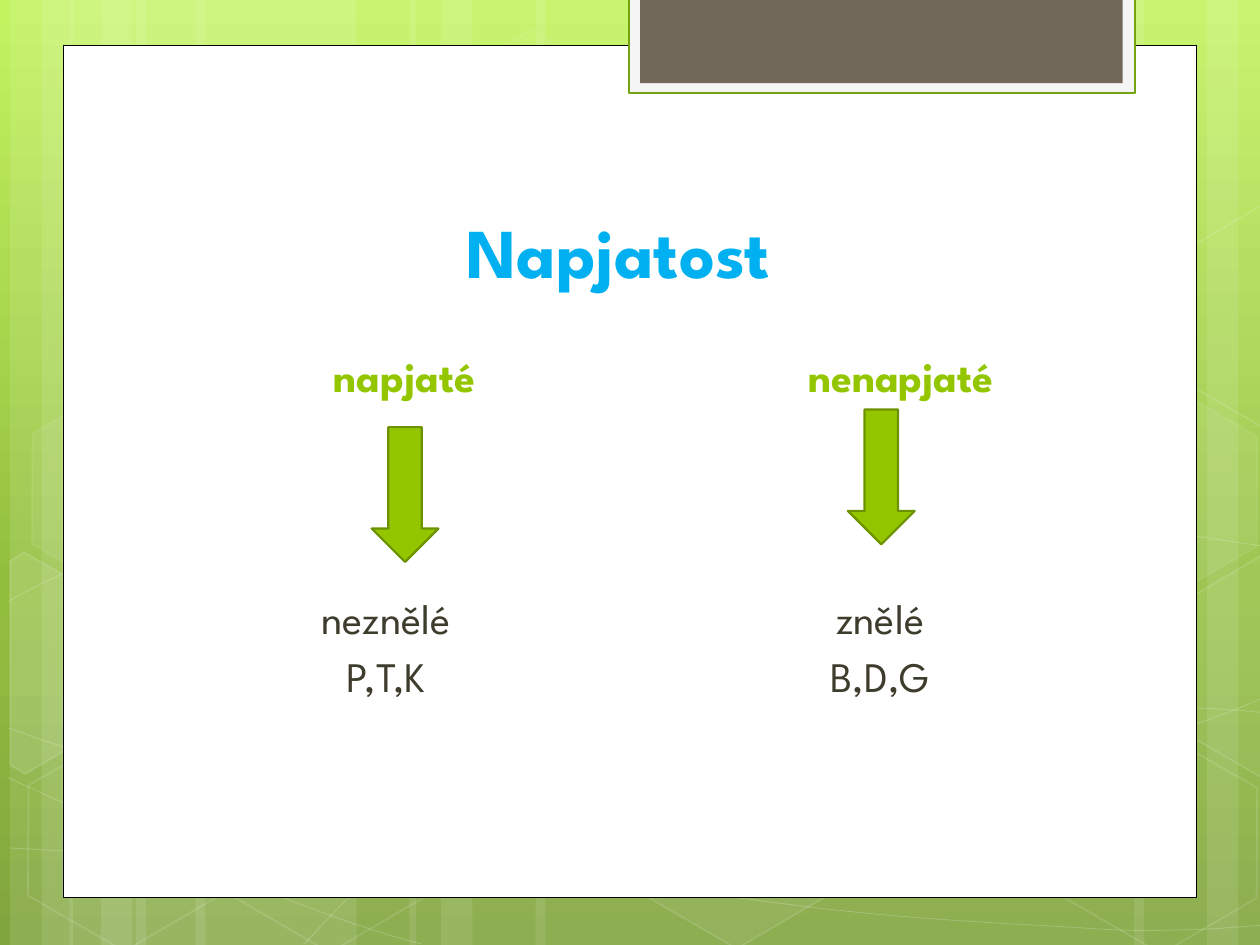
"""Build the Napjatost slide: tense and lax consonants over a green hexagon backdrop."""
import copy
import math

import pptx
import pptx.util
import pptx.dml.color
import pptx.enum.shapes
import pptx.enum.text
import pptx.oxml
import pptx.oxml.ns

RGBColor = pptx.dml.color.RGBColor
WHITE = RGBColor(0xFF, 0xFF, 0xFF)
BLACK = RGBColor(0x00, 0x00, 0x00)
LIME = RGBColor(0xC3, 0xF3, 0x5F)
LEAF = RGBColor(0x93, 0xBF, 0x3F)
MOSS = RGBColor(0x81, 0xA5, 0x3E)
GREEN = RGBColor(0x94, 0xC6, 0x00)
DARK_GREEN = RGBColor(0x6D, 0x92, 0x00)
TAB_EDGE = RGBColor(0x74, 0xA5, 0x10)
TAB_PALE = RGBColor(0xF5, 0xF5, 0xF5)
TAB_BROWN = RGBColor(0x71, 0x68, 0x5A)
SKY = RGBColor(0x00, 0xB0, 0xF0)
INK = RGBColor(0x3E, 0x3D, 0x2D)
FONT = "League Spartan"
TILT = 30
PRESET = pptx.enum.shapes.MSO_SHAPE
ANCHOR = pptx.enum.text.MSO_ANCHOR

presentation = pptx.Presentation()
presentation.slide_width = pptx.util.Inches(10)
presentation.slide_height = pptx.util.Inches(7.5)
slide = presentation.slides.add_slide(presentation.slide_layouts[6])
column = presentation.slide_width / 10
row = presentation.slide_height / 7.5


def paint(shape, fill=None, line=None, width=1, fill_alpha=100, line_alpha=100):
    """Set fill and line, each with its opacity in percent, and drop the shadow."""
    shape.shadow.inherit = False
    for target, color, alpha in ((shape.fill, fill, fill_alpha), (shape.line.fill, line, line_alpha)):
        if color is None:
            target.background()
            continue
        target.solid()
        target.fore_color.rgb = color
        if alpha < 100:
            holder = shape.element.spPr if target is shape.fill else shape.line._get_or_add_ln()
            solid = holder.find(pptx.oxml.ns.qn("a:solidFill"))
            opacity = pptx.oxml.parse_xml(
                f'<a:alpha {pptx.oxml.ns.nsdecls("a")} val="{alpha * 1000}"/>')
            solid[0].append(opacity)
    if line is not None:
        shape.line.width = pptx.util.Pt(width)


def place(kind, left, top, wide, high):
    """Add a preset shape, or a text box when kind is None, in grid units."""
    box = [int(left * column), int(top * row), int(wide * column), int(high * row)]
    if kind is None:
        return slide.shapes.add_textbox(*box)
    return slide.shapes.add_shape(kind, *box)


background = slide.background.fill
background.gradient()
background.gradient_angle = 270
stop_list = slide.element.find(".//" + pptx.oxml.ns.qn("a:gsLst"))
stop_list.insert(1, copy.deepcopy(stop_list[0]))
for stop, color, position in zip(background.gradient_stops, (LIME, LEAF, MOSS), (0, 0.62, 1)):
    stop.color.rgb = color
    stop.position = position

stripes = [(1.08, 1.75), (0.08, 0.5), (0.33, 0.83), (1.55, 1.75), (0.55, 0.5), (0.8, 0.83),
           (7.33, 1.75), (9.58, 0.5), (9, 0.83), (4.25, 3.08), (3.25, 0.5), (3.5, 0.83)]
for left, wide in stripes:
    paint(place(PRESET.RECTANGLE, left, 0, wide, 7.5), WHITE, fill_alpha=10)

curves = [
    [(0.07, 6.73), (0.61, 6.76), (1.15, 6.79), (1.9, 6.78), (2.65, 6.77), (3.58, 6.75), (4.58, 6.65),
     (5.58, 6.55), (7, 6.36), (7.92, 6.17), (8.83, 5.98), (9.77, 5.68), (10.07, 5.51)],
    [(0.07, 4.77), (0.36, 4.61), (0.65, 4.46), (1.21, 4.31), (1.78, 4.16), (2.59, 3.94), (3.47, 3.87),
     (4.36, 3.8), (5.44, 3.79), (6.54, 3.87), (7.64, 3.95), (9.47, 4.26), (10.07, 4.34)],
    [(0.06, 6.17), (1.27, 6.72), (2.47, 7.27), (3.34, 7.49)],
    [(0.07, 5.78), (0.38, 5.89), (0.7, 6), (1.28, 6.16), (1.86, 6.31), (2.73, 6.56), (3.57, 6.73),
     (4.4, 6.9), (5.45, 7.08), (6.28, 7.18), (7.11, 7.29), (8, 7.33), (8.53, 7.36),
     (9.05, 7.4), (9.19, 7.38), (9.45, 7.38), (9.71, 7.37), (9.89, 7.35), (10.07, 7.34)],
    [(2.42, 7.49), (2.6, 7.29), (2.78, 7.09), (3.02, 6.91), (3.26, 6.73), (3.6, 6.53), (3.88, 6.39),
     (4.16, 6.25), (4.33, 6.19), (4.7, 6.09), (5.06, 5.99), (5.73, 5.85), (6.08, 5.78),
     (6.44, 5.71), (6.49, 5.71), (6.8, 5.69), (7.11, 5.66), (7.6, 5.63), (7.94, 5.62),
     (8.29, 5.61), (8.86, 5.62), (8.86, 5.62), (9.08, 5.62), (9.31, 5.62), (9.53, 5.62),
     (9.71, 5.63), (9.88, 5.64), (9.97, 5.65), (10.06, 5.66), (10.03, 5.65), (10.06, 5.66)],
]
for curve in curves:
    points = [(x * column, y * row) for x, y in curve]
    builder = slide.shapes.build_freeform(*map(int, points[0]))
    builder.add_line_segments(points[1:], close=False)
    wave = builder.convert_to_shape()
    segments = list(wave.element.iter(pptx.oxml.ns.qn("a:lnTo")))
    for start in range(0, len(segments), 3):
        bezier = pptx.oxml.parse_xml(f'<a:cubicBezTo {pptx.oxml.ns.nsdecls("a")}/>')
        segments[start].addprevious(bezier)
        for segment in segments[start:start + 3]:
            bezier.append(segment[0])
            segment.getparent().remove(segment)
    paint(wave, line=WHITE, width=0.5, line_alpha=20)

hexagons = [(3.34, 0.36, 4, 8), (4.97, 5.89, 6, 12), (0.11, 5.91, 0, 12), (0.14, 3.12, 7, 8),
            (1.74, 5.92, 0, 12), (7.53, 4.53, 10, 12), (8.34, 5.93, 0, 12), (8.34, 3.14, 7, 8)]
for left, top, fill_alpha, line_alpha in hexagons:
    hexagon = place(PRESET.HEXAGON, left, top, 1.75, 1.52)
    hexagon.rotation = TILT
    hexagon.adjustments[0] = 0.285
    hexagon.adjustments[1] = 1.155
    paint(hexagon, WHITE if fill_alpha else None, WHITE, 1, fill_alpha, line_alpha)

cut_hexagons = [
    ((0.36, 5.35), 10,
     [(0.08, 4.45), (0.19, 4.38), (0.96, 4.82), (0.95, 5.7), (0.2, 6.14), (0.08, 6.07)]),
    ((9.85, 5.2), 4,
     [(9.26, 4.85), (10.01, 4.41), (10.09, 4.46), (10.09, 6.13), (10.02, 6.17), (9.26, 5.73)]),
    ((9.85, 2.41), 0,
     [(9.26, 2.07), (10.01, 1.63), (10.1, 1.68), (10.09, 3.35), (10.02, 3.39), (9.26, 2.95)]),
]
cosine, sine = math.cos(math.radians(TILT)), math.sin(math.radians(TILT))
for (middle_x, middle_y), fill_alpha, corners in cut_hexagons:
    offsets = [(x - middle_x, y - middle_y) for x, y in corners]
    points = [((middle_x + x * cosine + y * sine) * column,
               (middle_y - x * sine + y * cosine) * row) for x, y in offsets]
    builder = slide.shapes.build_freeform(*map(int, points[0]))
    builder.add_line_segments(points[1:], close=True)
    cut_hexagon = builder.convert_to_shape()
    cut_hexagon.rotation = TILT
    paint(cut_hexagon, WHITE if fill_alpha else None, WHITE, 1, fill_alpha, 12)

paint(place(PRESET.RECTANGLE, 0.5, 0.36, 9, 6.76), WHITE, BLACK, 0.5)
paint(place(PRESET.RECTANGLE, 4.99, -0.02, 4.02, 0.76), TAB_PALE, TAB_EDGE, 1.25)
paint(place(PRESET.RECTANGLE, 5.08, -0.02, 3.83, 0.68), TAB_BROWN)

texts = [
    ((1.14, 1.12, 7.68, 1.25), ["Napjatost "], 40, SKY, True, ANCHOR.BOTTOM, 0.05),
    ((1.54, 2.53, 3.34, 0.7), ["napjaté"], 24, GREEN, True, ANCHOR.BOTTOM, 0.05),
    ((1.16, 3.25, 3.74, 3.1), ["neznělé", "P,T,K"], 24, INK, False, ANCHOR.TOP, 1.45),
    ((5.48, 2.53, 3.34, 0.7), ["nenapjaté"], 24, GREEN, True, ANCHOR.BOTTOM, 0.05),
    ((5.08, 3.25, 3.74, 3.1), ["znělé", "B,D,G"], 24, INK, False, ANCHOR.TOP, 1.45),
]
for box, lines, size, color, bold, anchor, inset in texts:
    frame = place(None, *box).text_frame
    frame.word_wrap = True
    frame.vertical_anchor = anchor
    frame.margin_top = int(inset * row)
    for index, line in enumerate(lines):
        paragraph = frame.paragraphs[0] if index == 0 else frame.add_paragraph()
        paragraph.alignment = pptx.enum.text.PP_ALIGN.CENTER
        paragraph.space_before = pptx.util.Pt(4.8 * index)
        if not bold:
            paragraph._p.get_or_add_pPr().set("marL", str(int(0.07 * column)))
        run = paragraph.add_run()
        run.text = line
        run.font.name = FONT
        run.font.size = pptx.util.Pt(size)
        run.font.bold = bold
        run.font.color.rgb = color

for left, top in ((6.73, 3.25), (2.95, 3.39)):
    paint(place(PRESET.DOWN_ARROW, left, top, 0.53, 1.07), GREEN, DARK_GREEN, 1.25)

presentation.save("out.pptx")
